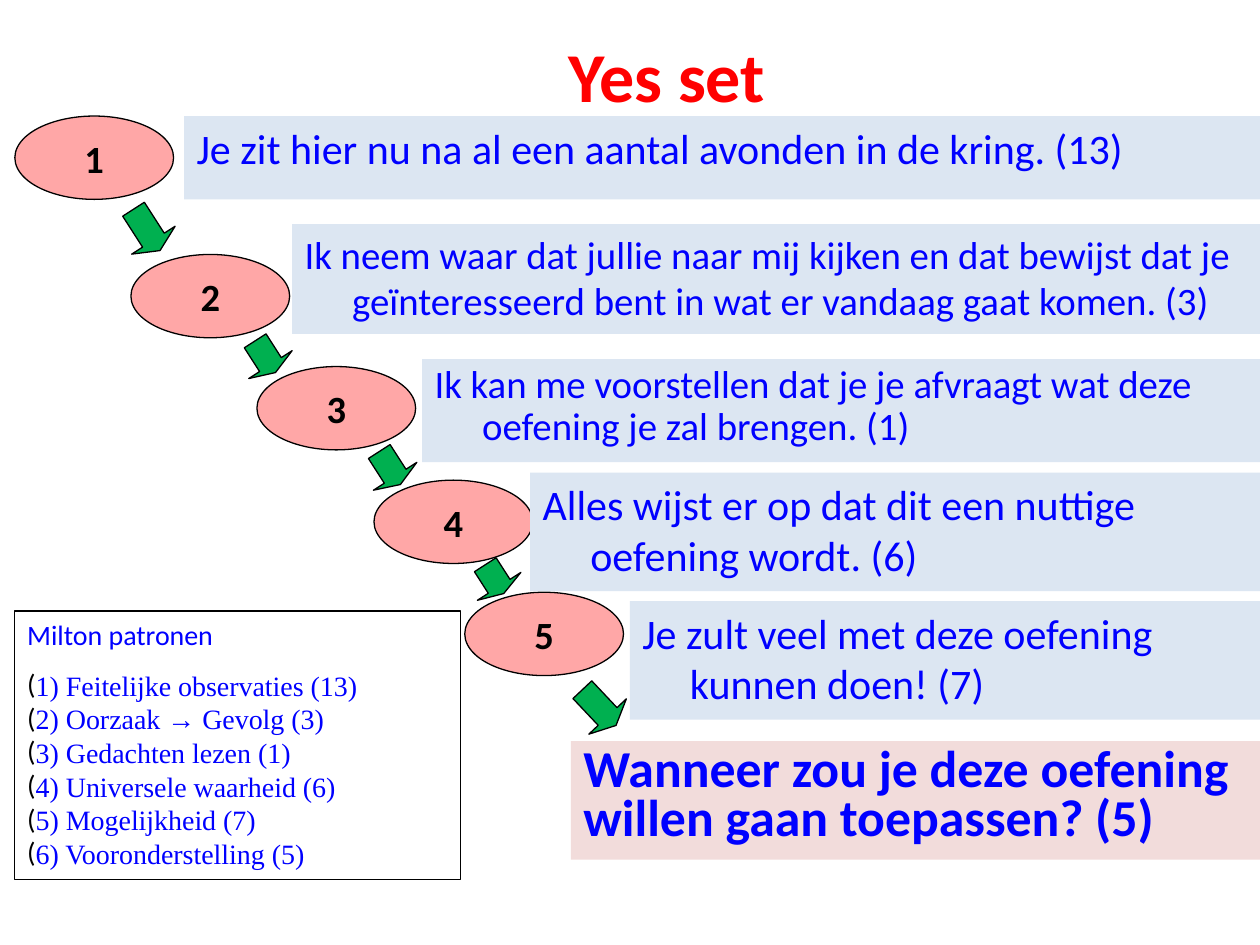
"""Build the "Yes set" slide: five numbered steps that lead to a question."""
import lxml.etree
import pptx
import pptx.dml.color
import pptx.enum.shapes
import pptx.enum.text
import pptx.oxml.ns
import pptx.util

Cm, Pt = pptx.util.Cm, pptx.util.Pt
SHAPE = pptx.enum.shapes.MSO_SHAPE
ALIGN = pptx.enum.text.PP_ALIGN
ANCHOR = pptx.enum.text.MSO_ANCHOR
FIT = pptx.enum.text.MSO_AUTO_SIZE

COLORS = {
    "title": "FF0000", "text": "0000FF", "number": "000000", "line": "000000",
    "step": "FFA7A7", "arrow": "00B050", "sentence": "DCE6F2",
    "question": "F2DCDB", "note": "FFFFFF",
}
WIDTH, HEIGHT = 25.4, 19.05
STEP_SIZE = (3.2, 1.68)
ARROW_WIDTH = 1.04
HANGING = 0.96

STEPS = [(0.3, 2.34), (2.64, 5.13), (5.18, 7.39), (7.54, 9.68), (9.37, 11.94)]
ARROWS = [
    (2.44, 4.14, 0.99, 327.3), (4.83, 6.81, 0.76, 327.3),
    (7.34, 9.04, 0.79, 327.3), (9.45, 11.33, 0.69, 327.3),
    (11.56, 13.77, 0.99, 316.7),
]
OPENING = "Je zit hier nu na al een aantal avonden in de kring. (13)"
SENTENCES = [
    (5.89, 4.52, 2.21, 22.2, 1.0, "Ik neem waar dat jullie naar mij kijken en dat bewijst "
     "dat je geïnteresseerd bent in wat er vandaag gaat komen. (3)"),
    (8.51, 7.24, 2.08, 22.2, 0.9, "Ik kan me voorstellen dat je je afvraagt wat deze "
     "oefening je zal brengen. (1)"),
    (10.69, 9.53, 2.39, 24, 1.0, "Alles wijst er op dat dit een nuttige oefening wordt. (6)"),
    (12.7, 12.12, 2.39, 24, 1.0, "Je zult veel met deze oefening kunnen doen! (7)"),
]
QUESTION = "Wanneer zou je deze oefening willen gaan toepassen? (5)"
PATTERNS = [
    "Feitelijke observaties (13)", "Oorzaak → Gevolg (3)", "Gedachten lezen (1)",
    "Universele waarheid (6)", "Mogelijkheid (7)", "Vooronderstelling (5)",
]


class Deck:
    """Hold the style and the current slide."""

    def __init__(self):
        self.prs = pptx.Presentation()
        self.prs.slide_width, self.prs.slide_height = Cm(WIDTH), Cm(HEIGHT)
        self.s = self.prs.slides.add_slide(self.prs.slide_layouts[1])

    def rgb(self, name):
        """Return the named colour."""
        return pptx.dml.color.RGBColor.from_string(COLORS[name])

    def apply(self, obj, values):
        """Set attributes from a dict."""
        for name, value in values.items():
            setattr(obj, name, value)

    def place(self, sp, x, y, w, h):
        """Move and size a shape."""
        self.apply(sp, {"left": Cm(x), "top": Cm(y), "width": Cm(w), "height": Cm(h)})

    def fill(self, sp, name):
        """Give a shape a solid fill."""
        sp.fill.solid()
        sp.fill.fore_color.rgb = self.rgb(name)

    def frame(self, sp, anchor=ANCHOR.TOP, wrap=True, fit=FIT.NONE):
        """Set up and return the text frame."""
        tf = sp.text_frame
        self.apply(tf, {"vertical_anchor": anchor, "word_wrap": wrap, "auto_size": fit})
        return tf

    def text(self, p, text, size, color="text", bold=False, font="Calibri", **layout):
        """Fill a paragraph with one formatted run."""
        spacing = {"alignment": ALIGN.LEFT, "space_before": Pt(0), "space_after": Pt(0)}
        self.apply(p, spacing | layout)
        r = p.add_run()
        r.text = text
        self.apply(r.font, {"name": font, "size": Pt(size), "bold": bold})
        r.font.color.rgb = self.rgb(color)

    def indent(self, p, margin, first):
        """Set the left margin and first-line indent."""
        pPr = p._p.get_or_add_pPr()
        pPr.set("marL", str(Cm(margin)))
        pPr.set("indent", str(Cm(first)))
        return pPr

    def bullet(self, p, char):
        """Put a black bullet character straight before the text."""
        pPr, qn = self.indent(p, 0, 0), pptx.oxml.ns.qn
        color = lxml.etree.SubElement(pPr, qn("a:buClr"))
        lxml.etree.SubElement(color, qn("a:srgbClr"), val=COLORS["line"])
        lxml.etree.SubElement(pPr, qn("a:buFont"), typeface="Calibri")
        lxml.etree.SubElement(pPr, qn("a:buChar"), char=char)

    def shape(self, kind, x, y, w, h, fill, outline=True):
        """Add a flat preset shape."""
        sp = self.s.shapes.add_shape(kind, Cm(x), Cm(y), Cm(w), Cm(h))
        sp.shadow.inherit = False
        self.fill(sp, fill)
        if outline:
            sp.line.color.rgb = self.rgb("line")
            sp.line.width = Pt(0.75)
        else:
            sp.line.fill.background()
        return sp

    def title(self, text, *box):
        """Fill the title placeholder."""
        sp = self.s.shapes.title
        self.place(sp, *box)
        p = self.frame(sp, ANCHOR.MIDDLE, False).paragraphs[0]
        self.text(p, text, 40, "title", True, alignment=ALIGN.CENTER)

    def hanging(self, sp, text, size, spacing=1.0):
        """Set a sentence with a hanging indent."""
        p = self.frame(sp).paragraphs[0]
        self.text(p, text, size, line_spacing=spacing)
        lxml.etree.SubElement(self.indent(p, HANGING, -HANGING), pptx.oxml.ns.qn("a:buNone"))

    def body(self, text, x, y, h):
        """Fill the body placeholder up to the right edge."""
        sp = self.s.placeholders[1]
        self.place(sp, x, y, WIDTH - x, h)
        self.fill(sp, "sentence")
        self.hanging(sp, text, 24)

    def sentence(self, x, y, h, size, spacing, text):
        """Add a sentence band up to the right edge."""
        sp = self.shape(SHAPE.RECTANGLE, x, y, WIDTH - x, h, "sentence", False)
        self.hanging(sp, text, size, spacing)

    def question(self, x, y, h, text):
        """Add the closing question."""
        sp = self.shape(SHAPE.RECTANGLE, x, y, WIDTH - x, h, "question", False)
        self.text(self.frame(sp).paragraphs[0], text, 29.6, bold=True, line_spacing=0.8)

    def step(self, number, x, y):
        """Add a numbered ellipse."""
        sp = self.shape(SHAPE.OVAL, x, y, *STEP_SIZE, "step")
        p = self.frame(sp, ANCHOR.MIDDLE).paragraphs[0]
        self.text(p, str(number), 22, "number", True, alignment=ALIGN.CENTER)

    def arrow(self, x, y, h, rotation):
        """Add a turned block arrow."""
        sp = self.shape(SHAPE.DOWN_ARROW, x, y, ARROW_WIDTH, h, "arrow")
        sp.rotation = rotation
        sp.adjustments[0], sp.adjustments[1] = 0.5, 0.25

    def note(self, heading, items, *box):
        """Add the framed list of patterns."""
        sp = self.shape(SHAPE.RECTANGLE, *box, "note")
        tf = self.frame(sp, fit=FIT.SHAPE_TO_FIT_TEXT)
        self.text(tf.paragraphs[0], heading, 16, space_after=Pt(10))
        for i, item in enumerate(items, 1):
            p = tf.add_paragraph()
            self.text(p, f"{i}) {item}", 16, font="Times New Roman")
            self.bullet(p, "(")


def main():
    """Build and save the slide."""
    deck = Deck()
    deck.title("Yes set", 11.18, 0.53, 4.52, 1.96)
    deck.body(OPENING, 3.71, 2.34, 1.68)
    for number, spot in enumerate(STEPS, 1):
        deck.step(number, *spot)
    for arrow in ARROWS:
        deck.arrow(*arrow)
    for sentence in SENTENCES:
        deck.sentence(*sentence)
    deck.question(11.51, 14.94, 2.39, QUESTION)
    deck.note("Milton patronen", PATTERNS, 0.3, 12.32, 8.99, 5.41)
    deck.prs.save("out.pptx")


if __name__ == "__main__":
    main()
